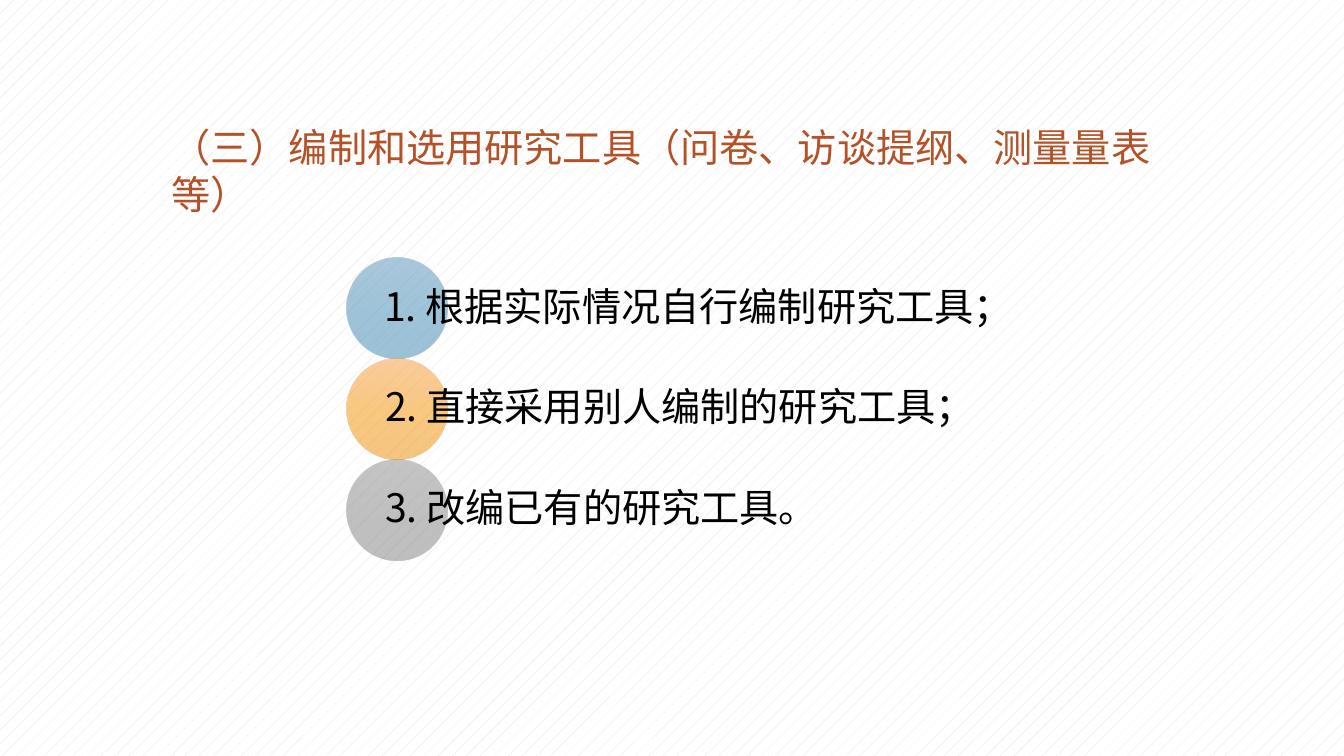
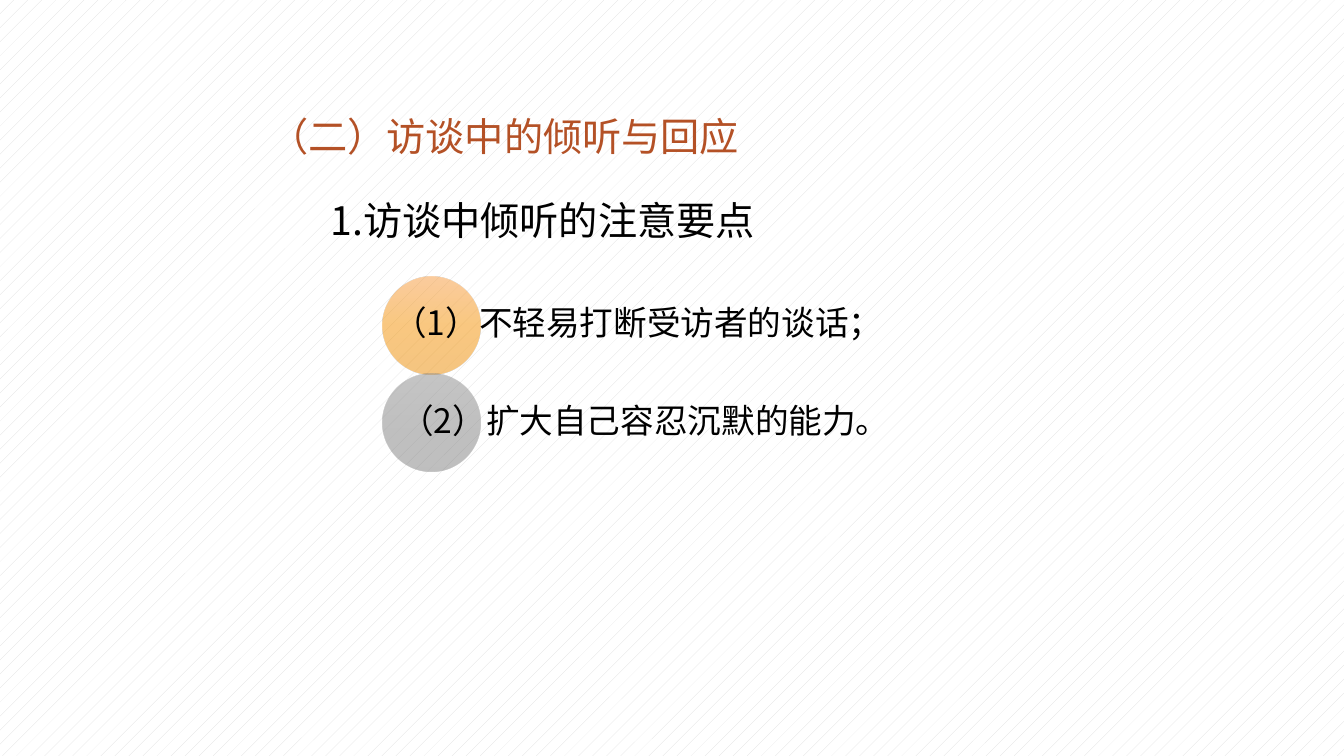
import pptx
import pptx.util
import pptx.dml.color
import pptx.enum.dml
import pptx.enum.shapes
import pptx.enum.text
import pptx.oxml.ns
import lxml.etree

WIDE, HIGH = 13.33, 7.5
FONT = "Noto Sans CJK SC"
HUES = {"title": "B45126", "text": "000000", "hatch": "DDDDDD", "paper": "FFFFFF"}
GRADS = {
    "blue": ("5592B7", "3F8AB5", "3986B1"),
    "orange": ("F79A3D", "F69200", "EC8C00"),
    "grey": ("8C8C8C", "838383", "7E7E7E"),
}

# Boxes are left, top, width, height in inches; "shift" is text left minus circle left
SLIDES = [
    {
        "title": "（三）编制和选用研究工具（问卷、访谈提纲、测量量表等）",
        "box": (1.6, 1.17, 10.46, 0.57),
        "start": (3.44, 2.56), "size": 1, "span": 6.03, "points": 28,
        "items": [
            ("blue", 0.37, "1. 根据实际情况自行编制研究工具；"),
            ("orange", 0.38, "2. 直接采用别人编制的研究工具；"),
            ("grey", 0.38, "3. 改编已有的研究工具。"),
        ],
    },
    {
        "title": "（二）访谈中的倾听与回应",
        "box": (2.57, 1.06, 4.91, 0.57), "latin": "Calibri",
        "lead": "1.访谈中倾听的注意要点", "place": (3.18, 1.9, 4.45, 0.57),
        "start": (3.79, 2.74), "size": 0.97, "span": 5.16, "points": 24,
        "items": [
            ("orange", 0.11, "（1）不轻易打断受访者的谈话；"),
            ("grey", 0.18, "（2）扩大自己容忍沉默的能力。"),
        ],
    },
]


def rgb(name):
    return pptx.dml.color.RGBColor.from_string(HUES[name])


def inches(box):
    return [pptx.util.Inches(v) for v in box]


def write(shape, text, box, size=28, hue="text", latin=FONT, middle=False, pad=None):
    """Place a text shape and give it one formatted paragraph."""
    shape.left, shape.top, shape.width, shape.height = inches(box)
    frame = shape.text_frame
    frame.word_wrap = True
    frame.auto_size = pptx.enum.text.MSO_AUTO_SIZE.NONE
    anchor = pptx.enum.text.MSO_ANCHOR
    frame.vertical_anchor = anchor.MIDDLE if middle else anchor.TOP
    if pad is not None:
        frame.margin_left = frame.margin_right = 0
        frame.margin_top = frame.margin_bottom = pptx.util.Inches(pad)
    line = frame.paragraphs[0]
    line.alignment = pptx.enum.text.PP_ALIGN.LEFT
    line.line_spacing = 0.9 if middle else 1.0
    run = line.add_run()
    run.text = text
    run.font.size = pptx.util.Pt(size)
    run.font.name = latin
    run.font.color.rgb = rgb(hue)
    east = lxml.etree.SubElement(run.font._element, pptx.oxml.ns.qn("a:ea"))
    east.set("typeface", FONT)


def circle(slide, box, grad):
    """Draw a circle with a half-transparent gradient from top to bottom."""
    qn = pptx.oxml.ns.qn
    shape = slide.shapes.add_shape(pptx.enum.shapes.MSO_SHAPE.OVAL, *inches(box))
    shape.shadow.inherit = False
    shape.line.fill.background()
    shape.fill.gradient()
    shape.fill.gradient_angle = 270
    stops = shape._element.spPr.find(qn("a:gradFill")).find(qn("a:gsLst"))
    for old in list(stops):
        stops.remove(old)
    for pos, hue in zip((0, 50000, 100000), GRADS[grad]):
        stop = lxml.etree.SubElement(stops, qn("a:gs"), pos=str(pos))
        tint = lxml.etree.SubElement(stop, qn("a:srgbClr"), val=hue)
        lxml.etree.SubElement(tint, qn("a:alpha"), val="50000")


def label(slide, text, box, **style):
    write(slide.shapes.add_textbox(0, 0, 0, 0), text, box, **style)


def build(deck, data):
    slide = deck.slides.add_slide(deck.slide_layouts[5])
    write(slide.shapes.title, data["title"], data["box"],
          hue="title", latin=data.get("latin", FONT))
    if "lead" in data:
        label(slide, data["lead"], data["place"])
    left, top = data["start"]
    size = data["size"]
    for row, (grad, shift, text) in enumerate(data["items"]):
        y = top + row * size
        circle(slide, (left, y, size, size), grad)
        label(slide, text, (left + shift, y, data["span"], size),
              size=data["points"], middle=True, pad=0.04)


def main():
    deck = pptx.Presentation()
    deck.slide_width, deck.slide_height = inches((WIDE, HIGH))
    fill = deck.slide_master.background.fill
    fill.patterned()
    fill.pattern = pptx.enum.dml.MSO_PATTERN.PERCENT_5
    fill.fore_color.rgb = rgb("hatch")
    fill.back_color.rgb = rgb("paper")
    for data in SLIDES:
        build(deck, data)
    deck.save("out.pptx")


if __name__ == "__main__":
    main()
